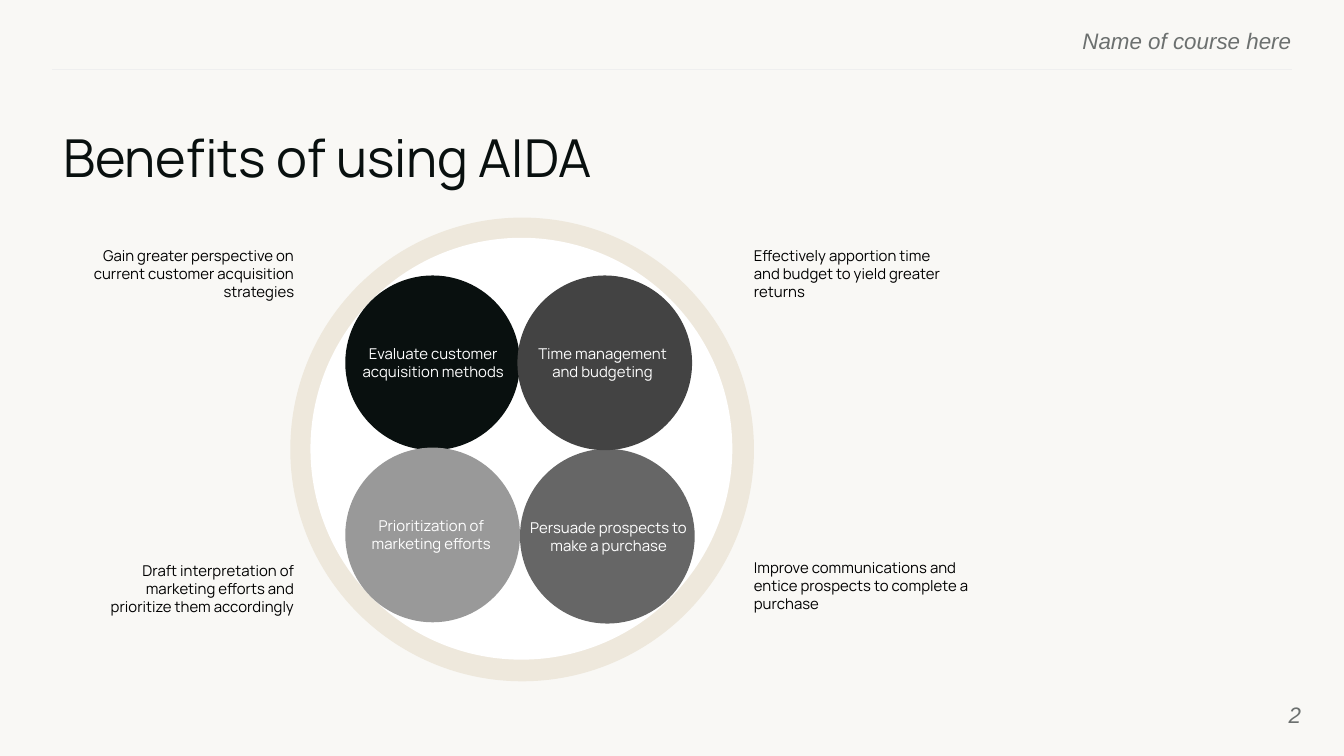
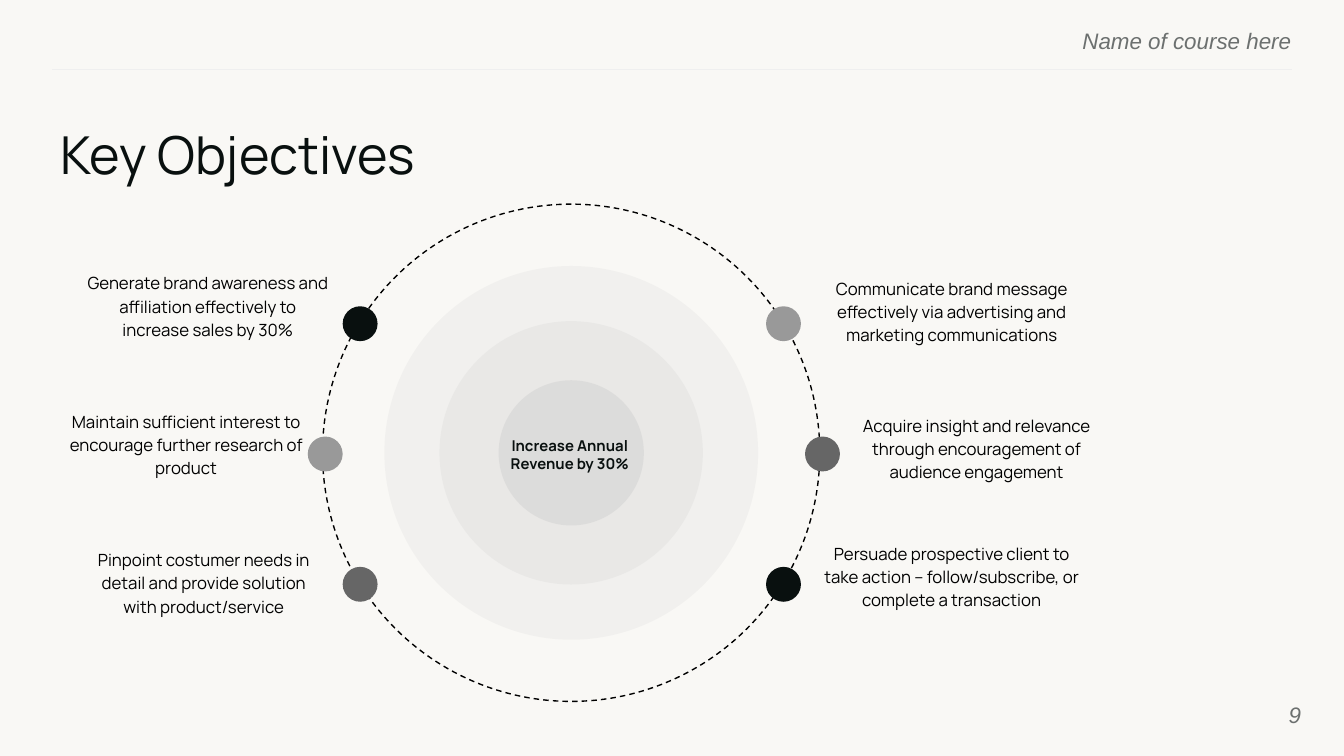
from dataclasses import dataclass

from lxml.etree import SubElement
from pptx import Presentation
from pptx.dml.color import RGBColor
from pptx.enum.dml import MSO_LINE
from pptx.enum.shapes import MSO_CONNECTOR, MSO_SHAPE
from pptx.enum.text import MSO_ANCHOR, MSO_AUTO_SIZE, PP_ALIGN
from pptx.oxml.ns import qn
from pptx.util import Pt


@dataclass(frozen=True)
class Theme:
    background: str = "F9F8F5"
    rule: str = "EFEFEF"
    muted: str = "6C706F"
    ink: str = "09100F"
    black: str = "000000"
    white: str = "FFFFFF"
    sand: str = "EEE8DC"
    charcoal: str = "434343"
    gray: str = "666666"
    silver: str = "999999"
    halo: str = "B5B7B7"
    font: str = "Manrope"
    furniture_font: str = "Arial"
    title_size: float = 28
    furniture_size: float = 12
    objective_size: float = 9
    label_size: float = 8


@dataclass(frozen=True)
class Box:
    left: float
    top: float
    width: float
    height: float

    def inner(self, left, top, width, height):
        return Box(self.left + left, self.top + top, width, height)

    def centered(self, diameter):
        return self.inner((self.width - diameter) / 2, (self.height - diameter) / 2,
                          diameter, diameter)

    def lengths(self):
        return [Pt(value) for value in (self.left, self.top, self.width, self.height)]


THEME = Theme()
PAGE = Box(0, 0, 720, 405)
TITLE = PAGE.inner(32.4, 65.5, 664.6, 36.7)
WHEEL = PAGE.inner(155.5, 116.6, 248.4, 248.4)
ORBIT = PAGE.inner(172.8, 109.4, 266.4, 266.4)
TEXT_INSETS = (2.9, 1.4)

BENEFITS = [
    (29.5, 31, THEME.ink, 0, 94.3, "Evaluate customer acquisition methods"),
    (123.1, 123.9, THEME.gray, 0, 95, "Persuade prospects to make a purchase"),
    (121.7, 31, THEME.charcoal, 1.4, 88.6, "Time management and budgeting"),
    (29.5, 123.2, THEME.silver, 6.5, 79.2, "Prioritization of marketing efforts"),
]
BENEFIT_NOTES = [
    (-112.3, 14.4, 117.4, PP_ALIGN.RIGHT,
     "Gain greater perspective on current customer acquisition strategies"),
    (245.5, 14.4, 108.7, PP_ALIGN.LEFT,
     "Effectively apportion time and budget to yield greater returns"),
    (-112.3, 182.9, 117.4, PP_ALIGN.RIGHT,
     "Draft interpretation of marketing efforts and prioritize them accordingly"),
    (245.5, 181.5, 125.3, PP_ALIGN.LEFT,
     "Improve communications and entice prospects to complete a purchase"),
]
HALOS = [(200.2, 11), (141.1, 13)]
CORE_DIAMETER, CORE_OPACITY = 77.8, 23
DOT_COLUMNS = [
    ((10.8, -7.9, 10.8), (THEME.ink, THEME.silver, THEME.gray)),
    ((237.6, 258.5, 237.6), (THEME.silver, THEME.gray, THEME.ink)),
]
DOT_TOP, DOT_PITCH, DOT_DIAMETER = 54.7, 69.8, 18.7
OBJECTIVES = [
    (-129.6, 33.9, 136.1,
     "Generate brand awareness and affiliation effectively to increase sales by 30%"),
    (-139, 108, 131.8,
     "Maintain sufficient interest to encourage further research of product"),
    (-129.6, 182.2, 131.8,
     "Pinpoint costumer needs in detail and provide solution with product/service"),
    (262.8, 36.8, 148.3,
     "Communicate brand message effectively via advertising and marketing communications"),
    (277.9, 110.2, 144.7,
     "Acquire insight and relevance through encouragement of audience engagement"),
    (262.8, 178.6, 148.3,
     "Persuade prospective client to take action – follow/subscribe, or complete a transaction"),
]


def write(shape, text, size, color, align=PP_ALIGN.LEFT, font=THEME.font, insets=TEXT_INSETS,
          anchor=MSO_ANCHOR.TOP, bold=False, italic=False, spacing=1.0):
    frame = shape.text_frame
    frame.word_wrap = True
    frame.auto_size = MSO_AUTO_SIZE.NONE
    frame.vertical_anchor = anchor
    frame.margin_left = frame.margin_right = Pt(insets[0])
    frame.margin_top = frame.margin_bottom = Pt(insets[1])
    paragraph = frame.paragraphs[0]
    paragraph.alignment = align
    paragraph.line_spacing = spacing
    run = paragraph.add_run()
    run.text = text
    run.font.name = font
    run.font.size = Pt(size)
    run.font.bold = bold
    run.font.italic = italic
    run.font.color.rgb = RGBColor.from_string(color)


def add_text(shapes, box, text, size, color, **style):
    write(shapes.add_textbox(*box.lengths()), text, size, color, **style)


def add_circle(shapes, box, color=None, opacity=100):
    circle = shapes.add_shape(MSO_SHAPE.OVAL, *box.lengths())
    circle.shadow.inherit = False
    circle.line.fill.background()
    if color is None:
        circle.fill.background()
        return circle
    circle.fill.solid()
    circle.fill.fore_color.rgb = RGBColor.from_string(color)
    if opacity < 100:
        color_element = circle.fill._xPr.find(qn("a:solidFill"))[0]
        SubElement(color_element, qn("a:alpha")).set("val", str(opacity * 1000))
    return circle


def add_furniture(slide, box, number):
    style = dict(align=PP_ALIGN.RIGHT, font=THEME.furniture_font, insets=(0, 0), italic=True)
    add_text(slide.shapes, box.inner(414.7, 14.4, 277.2, 13), "Name of course here",
             THEME.furniture_size, THEME.muted, **style)
    rule = slide.shapes.add_connector(MSO_CONNECTOR.STRAIGHT, Pt(box.left + 691.9),
                                      Pt(box.top + 37.4), Pt(box.left + 28.1), Pt(box.top + 37.4))
    rule.line.color.rgb = RGBColor.from_string(THEME.rule)
    rule.line.width = Pt(0.75)
    SubElement(rule._element.spPr, qn("a:effectLst"))
    add_text(slide.shapes, box.inner(653.8, 367.2, 43.2, 31), str(number),
             THEME.furniture_size, THEME.muted, anchor=MSO_ANCHOR.MIDDLE, **style)


def add_titled_slide(presentation, title, number, inset):
    slide = presentation.slides.add_slide(presentation.slide_layouts[5])
    placeholder = slide.shapes.title
    placeholder.left, placeholder.top, placeholder.width, placeholder.height = TITLE.lengths()
    write(placeholder, title, THEME.title_size, THEME.ink, insets=(inset, inset))
    placeholder.text_frame.paragraphs[0].space_after = Pt(10)
    add_furniture(slide, PAGE, number)
    return slide


def add_benefit_wheel(slide, box):
    shapes = slide.shapes
    add_circle(shapes, box, THEME.sand)
    add_circle(shapes, box.inner(10.8, 10.8, 226, 226), THEME.white)
    for left, top, color, label_left, label_width, label in BENEFITS:
        benefit = box.inner(left, top, 93.6, 93.6)
        add_circle(shapes, benefit, color)
        add_text(shapes, benefit.inner(label_left, 35.8, label_width, 20.2), label,
                 THEME.label_size, THEME.white, align=PP_ALIGN.CENTER)
    for left, top, width, align, note in BENEFIT_NOTES:
        add_text(shapes, box.inner(left, top, width, 33.1), note,
                 THEME.label_size, THEME.black, align=align)


def add_core(slide, box):
    shapes = slide.shapes.add_group_shape().shapes
    add_circle(shapes, box, THEME.halo, CORE_OPACITY)
    add_text(shapes, box.inner(-0.7, 28.8, 77.8, 24.5), "Increase Annual Revenue by 30%",
             THEME.label_size, THEME.ink, align=PP_ALIGN.CENTER, insets=(1.4, 1.4), bold=True)


def add_objective_orbit(slide, box):
    shapes = slide.shapes
    orbit = add_circle(shapes, box)
    orbit.line.color.rgb = RGBColor.from_string(THEME.black)
    orbit.line.width = Pt(0.75)
    orbit.line.dash_style = MSO_LINE.DASH
    for diameter, opacity in HALOS:
        add_circle(shapes, box.centered(diameter), THEME.halo, opacity)
    add_core(slide, box.centered(CORE_DIAMETER))
    for lefts, colors in DOT_COLUMNS:
        for row, (left, color) in enumerate(zip(lefts, colors)):
            add_circle(shapes, box.inner(left, DOT_TOP + row * DOT_PITCH,
                                         DOT_DIAMETER, DOT_DIAMETER), color)
    for left, top, width, objective in OBJECTIVES:
        add_text(shapes, box.inner(left, top, width, 51.8), objective, THEME.objective_size,
                 THEME.black, align=PP_ALIGN.CENTER, spacing=1.15)


def main():
    presentation = Presentation()
    presentation.slide_width, presentation.slide_height = Pt(PAGE.width), Pt(PAGE.height)
    background = presentation.slide_master.background.fill
    background.solid()
    background.fore_color.rgb = RGBColor.from_string(THEME.background)
    add_benefit_wheel(add_titled_slide(presentation, "Benefits of using AIDA", 2, 1.4), WHEEL)
    add_objective_orbit(add_titled_slide(presentation, "Key Objectives", 9, 0), ORBIT)
    presentation.save("out.pptx")


if __name__ == "__main__":
    main()
